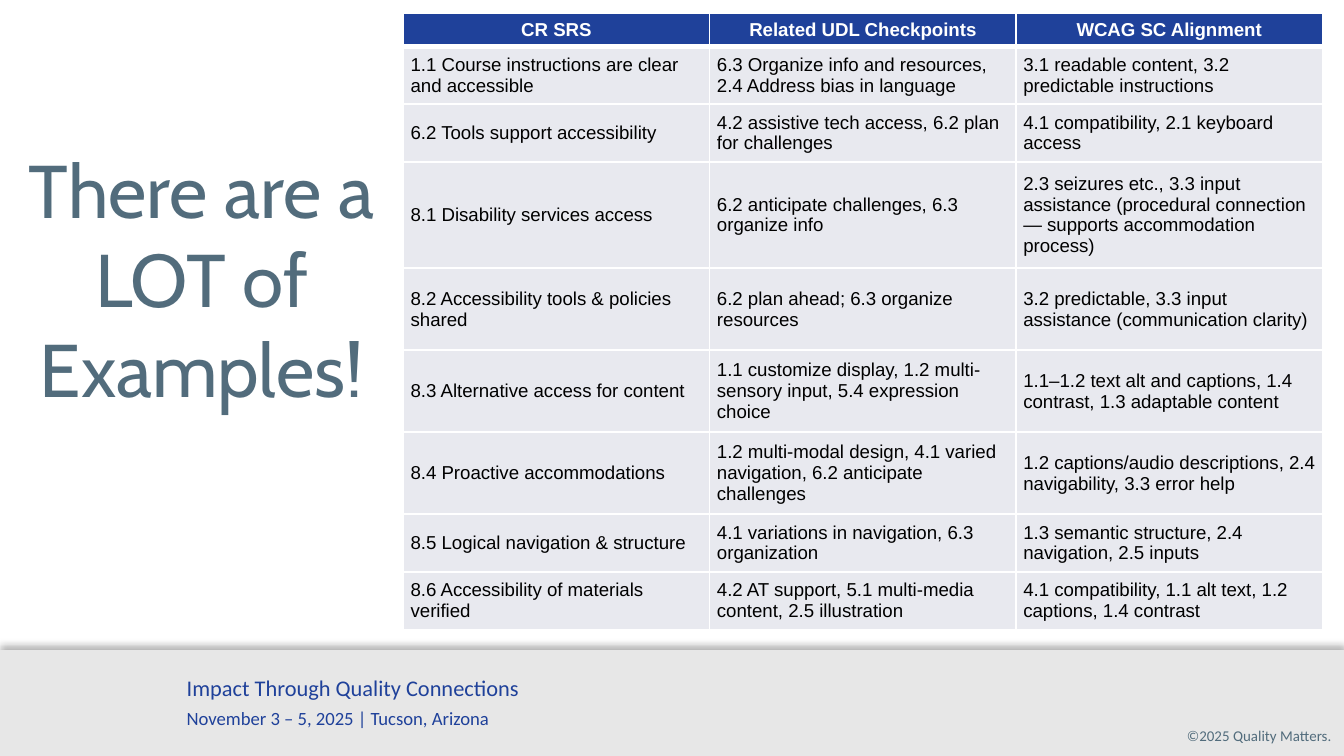
from lxml.etree import SubElement
from pptx import Presentation
from pptx.dml.color import RGBColor
from pptx.enum.shapes import MSO_SHAPE
from pptx.enum.text import MSO_ANCHOR, MSO_AUTO_SIZE, PP_ALIGN
from pptx.oxml import parse_xml
from pptx.oxml.ns import nsdecls, qn
from pptx.util import Cm, Pt

HEADINGS = ("CR SRS", "Related UDL Checkpoints", "WCAG SC Alignment")
# Height of the row in text lines, then one text per column
ROWS = [
    (2, "1.1 Course instructions are clear and accessible",
     "6.3 Organize info and resources, 2.4 Address bias in language",
     "3.1 readable content, 3.2 predictable instructions"),
    (2, "6.2 Tools support accessibility",
     "4.2 assistive tech access, 6.2 plan for challenges",
     "4.1 compatibility, 2.1 keyboard access"),
    (4, "8.1 Disability services access",
     "6.2 anticipate challenges, 6.3 organize info",
     "2.3 seizures etc., 3.3 input assistance (procedural connection — supports accommodation process)"),
    (3, "8.2 Accessibility tools & policies shared",
     "6.2 plan ahead; 6.3 organize resources",
     "3.2 predictable, 3.3 input assistance (communication clarity)"),
    (3, "8.3 Alternative access for content",
     "1.1 customize display, 1.2 multi-sensory input, 5.4 expression choice",
     "1.1–1.2 text alt and captions, 1.4 contrast, 1.3 adaptable content"),
    (3, "8.4 Proactive accommodations",
     "1.2 multi-modal design, 4.1 varied navigation, 6.2 anticipate challenges",
     "1.2 captions/audio descriptions, 2.4 navigability, 3.3 error help"),
    (2, "8.5 Logical navigation & structure",
     "4.1 variations in navigation, 6.3 organization",
     "1.3 semantic structure, 2.4 navigation, 2.5 inputs"),
    (2, "8.6 Accessibility of materials verified",
     "4.2 AT support, 5.1 multi-media content, 2.5 illustration",
     "4.1 compatibility, 1.1 alt text, 1.2 captions, 1.4 contrast"),
]
TITLE = "There are a LOT of Examples!"
CONFERENCE = "Impact Through Quality Connections"
DATE_PLACE = "November 3 – 5, 2025 | Tucson, Arizona"
COPYRIGHT = "©2025 Quality Matters."

THEME = {
    "blue": "1F419A", "slate": "526C7C", "band": "E7E7E7",
    "cell": "E8E9EF", "white": "FFFFFF", "black": "000000",
    # style: font, size, colour, bold
    "title": ("Cabin", 40, "slate", False),
    "heading": ("Arial", 10, "white", True),
    "body": ("Arial", 10, "black", False),
    "conference": ("Calibri", 12, "blue", False),
    "date": ("Calibri", 10, "blue", False),
    "copyright": ("Calibri", 8, "slate", False),
}
SLIDE_WIDTH, SLIDE_HEIGHT = Cm(25.4), Cm(14.29)
BAND_TOP = Cm(12.29)
COLUMN_WIDTH = Cm(5.79)
LINE_HEIGHT, ROW_PADDING = Cm(0.46), Cm(0.17)


def color(name):
    return RGBColor.from_string(THEME[name])


def set_attributes(target, values):
    for name, value in values.items():
        setattr(target, name, value)


def write(paragraph, text, style, alignment=PP_ALIGN.LEFT):
    name, size, color_name, bold = THEME[style]
    paragraph.text = text
    paragraph.alignment = alignment
    set_attributes(paragraph.font, {"name": name, "size": Pt(size), "bold": bold})
    paragraph.font.color.rgb = color(color_name)


def add_text(slide, position, lines, alignment=PP_ALIGN.LEFT, **frame_format):
    """Add a text box with one paragraph per (text, style) pair."""
    frame = slide.shapes.add_textbox(*position).text_frame
    set_attributes(frame, {"word_wrap": True, **frame_format})
    for index, (text, style) in enumerate(lines):
        paragraph = frame.add_paragraph() if index else frame.paragraphs[0]
        write(paragraph, text, style, alignment)
        if index:
            paragraph.space_before = Pt(3)


def add_footer(slide):
    band = slide.shapes.add_shape(MSO_SHAPE.RECTANGLE, 0, BAND_TOP,
                                  SLIDE_WIDTH, SLIDE_HEIGHT - BAND_TOP)
    band.fill.solid()
    band.fill.fore_color.rgb = color("band")
    band.line.fill.background()
    band.shadow.inherit = False
    effects = band.element.spPr.find(qn("a:effectLst"))
    effects.append(parse_xml(
        f'<a:outerShdw {nsdecls("a")} blurRad="{Pt(4)}" dist="{Pt(3)}" dir="16200000" '
        f'rotWithShape="0"><a:srgbClr val="{THEME["black"]}"><a:alpha val="30000"/>'
        '</a:srgbClr></a:outerShdw>'))
    add_text(slide, (Cm(3.28), Cm(12.62), Cm(16.23), Cm(1.3)),
             [(CONFERENCE, "conference"), (DATE_PLACE, "date")])
    add_text(slide, (Cm(21.13), Cm(13.61), Cm(4.04), Cm(0.61)),
             [(COPYRIGHT, "copyright")], PP_ALIGN.RIGHT, margin_right=0)


def set_borders(cell, widths):
    properties = cell._tc.get_or_add_tcPr()
    for index, (side, width) in enumerate(widths.items()):
        line = SubElement(properties, qn(f"a:ln{side}"), w=str(Pt(width)))
        fill = SubElement(line, qn("a:solidFill"))
        SubElement(fill, qn("a:srgbClr"), val=THEME["white"])
        properties.insert(index, line)


def add_alignment_table(slide):
    rows = [(1, *HEADINGS), *ROWS]
    heights = [ROW_PADDING + lines * LINE_HEIGHT for lines, *_ in rows]
    columns = len(HEADINGS)
    table = slide.shapes.add_table(len(rows), columns, Cm(7.62), Cm(0.25),
                                   columns * COLUMN_WIDTH, sum(heights)).table
    table.horz_banding = False
    for column in table.columns:
        column.width = COLUMN_WIDTH
    for row_index, (_, *texts) in enumerate(rows):
        table.rows[row_index].height = heights[row_index]
        is_header = row_index == 0
        for column_index, text in enumerate(texts):
            cell = table.cell(row_index, column_index)
            set_attributes(cell, {
                "vertical_anchor": MSO_ANCHOR.MIDDLE,
                "margin_left": Cm(0.14), "margin_right": Cm(0.14),
                "margin_top": Cm(0.08), "margin_bottom": Cm(0.08)})
            write(cell.text_frame.paragraphs[0], text,
                  "heading" if is_header else "body",
                  PP_ALIGN.CENTER if is_header else PP_ALIGN.LEFT)
            cell.fill.solid()
            cell.fill.fore_color.rgb = color("blue" if is_header else "cell")
            set_borders(cell, {"L": 1, "R": 1, "T": 3 if row_index == 1 else 1,
                               "B": 3 if is_header else 1})


def add_title(slide):
    title = slide.shapes.title
    set_attributes(title, {"left": 0, "top": Cm(4.06), "width": Cm(7.62), "height": Cm(2.39)})
    set_attributes(title.text_frame, {
        "word_wrap": True, "auto_size": MSO_AUTO_SIZE.NONE,
        "vertical_anchor": MSO_ANCHOR.MIDDLE})
    write(title.text_frame.paragraphs[0], TITLE, "title", PP_ALIGN.CENTER)


def main():
    presentation = Presentation()
    set_attributes(presentation, {"slide_width": SLIDE_WIDTH, "slide_height": SLIDE_HEIGHT})
    slide = presentation.slides.add_slide(presentation.slide_layouts.get_by_name("Title Only"))
    add_footer(slide)
    add_title(slide)
    add_alignment_table(slide)
    presentation.save("out.pptx")


if __name__ == "__main__":
    main()
